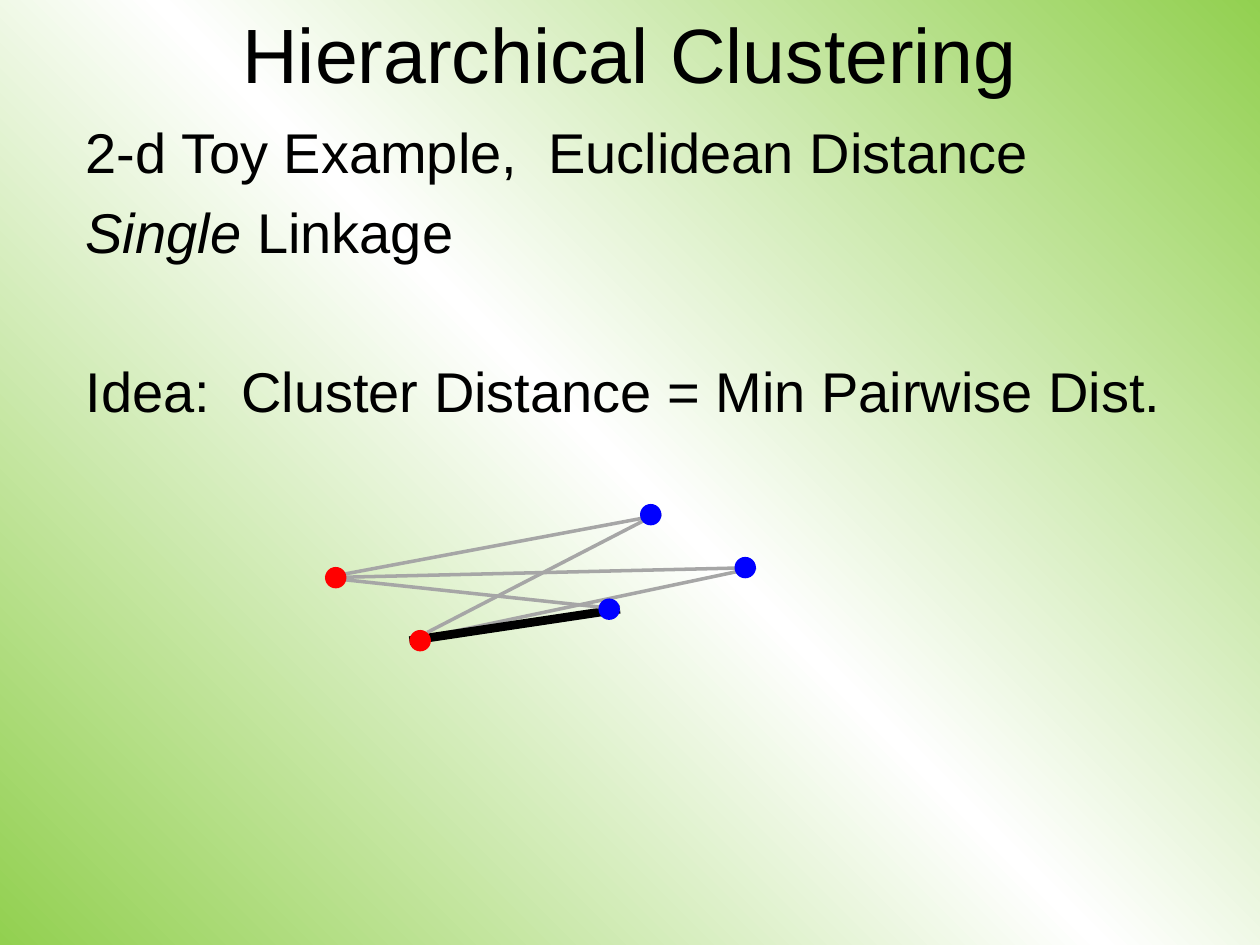
from copy import deepcopy
from dataclasses import dataclass

from lxml import etree
from pptx import Presentation
from pptx.dml.color import RGBColor
from pptx.enum import shapes, text
from pptx.oxml.ns import qn
from pptx.util import Inches, Pt


@dataclass(frozen=True)
class Theme:
    font: str = "Arial"
    title_size: float = 44
    body_size: float = 32
    line_gap: float = 7.7
    section_gap: float = 52.2
    ink: str = "000000"
    link: str = "A6A6A6"
    red: str = "FF0000"
    blue: str = "0000FF"
    edge: str = "92D050"
    center: str = "FFFFFF"


@dataclass(frozen=True)
class Dot:
    x: float
    y: float
    color: str

    @property
    def west(self) -> tuple[float, float]:
        return self.x, self.y + DIAMETER / 2

    @property
    def east(self) -> tuple[float, float]:
        return self.x + DIAMETER, self.y + DIAMETER / 2


@dataclass(frozen=True)
class Link:
    start: tuple[float, float]
    end: tuple[float, float]
    color: str
    width: float = 2


@dataclass(frozen=True)
class Line:
    runs: tuple[tuple[str, bool], ...]
    before: float


THEME = Theme()
DIAMETER = 0.17

RED_UPPER = Dot(2.58, 4.5, THEME.red)
RED_LOWER = Dot(3.25, 5, THEME.red)
BLUE_TOP = Dot(5.08, 4, THEME.blue)
BLUE_NEAR = Dot(4.75, 4.75, THEME.blue)
BLUE_FAR = Dot(5.83, 4.42, THEME.blue)
DOTS = (RED_UPPER, RED_LOWER, BLUE_TOP, BLUE_NEAR, BLUE_FAR)

LINKS = (
    Link(RED_LOWER.west, BLUE_FAR.east, THEME.link),
    Link(RED_LOWER.west, BLUE_NEAR.east, THEME.ink, 5),
    *(Link(RED_UPPER.west, dot.east, THEME.link) for dot in (BLUE_NEAR, BLUE_FAR, BLUE_TOP)),
    Link((3.39, 5.02), (5.21, 4.08), THEME.link),
)

LINES = (
    Line((("2-d Toy Example,  Euclidean Distance", False),), 0),
    Line((("Single", True), (" Linkage", False)), THEME.line_gap),
    Line((("Idea:  Cluster Distance = Min Pairwise Dist.", False),), THEME.section_gap),
)


def paint_background(s) -> None:
    fill = s.background.fill
    fill.gradient()
    fill.gradient_angle = 225
    stops = s._element.find(".//" + qn("a:gsLst"))
    stops.insert(1, deepcopy(stops[0]))
    colors = (THEME.edge, THEME.center, THEME.edge)
    for stop, position, color in zip(fill.gradient_stops, (0, 0.5, 1), colors):
        stop.position = position
        stop.color.rgb = RGBColor.from_string(color)


def place(sp, left: float, top: float, width: float, height: float) -> None:
    sp.left, sp.top, sp.width, sp.height = map(Inches, (left, top, width, height))


def add_run(p, content: str, size: float, italic: bool = False) -> None:
    r = p.add_run()
    r.text = content
    r.font.name = THEME.font
    r.font.size = Pt(size)
    r.font.italic = italic
    r.font.color.rgb = RGBColor.from_string(THEME.ink)


def write_title(sp) -> None:
    place(sp, 0.75, 0.08, 8.5, 0.67)
    tf = sp.text_frame
    tf.auto_size = text.MSO_AUTO_SIZE.NONE
    tf.vertical_anchor = text.MSO_ANCHOR.MIDDLE
    p = tf.paragraphs[0]
    p.alignment = text.PP_ALIGN.CENTER
    add_run(p, "Hierarchical Clustering", THEME.title_size)


def write_body(sp) -> None:
    place(sp, 0.58, 0.88, 9.25, 6.2)
    tf = sp.text_frame
    tf.auto_size = text.MSO_AUTO_SIZE.NONE
    for i, line in enumerate(LINES):
        p = tf.add_paragraph() if i else tf.paragraphs[0]
        pPr = p._p.get_or_add_pPr()
        pPr.set("marL", "0")
        pPr.set("indent", "0")
        etree.SubElement(pPr, qn("a:buNone"))
        p.space_before = Pt(line.before)
        for content, italic in line.runs:
            add_run(p, content, THEME.body_size, italic)


def draw_link(s, link: Link) -> None:
    ends = map(Inches, (*link.start, *link.end))
    sp = s.shapes.add_connector(shapes.MSO_CONNECTOR.STRAIGHT, *ends)
    sp.line.color.rgb = RGBColor.from_string(link.color)
    sp.line.width = Pt(link.width)
    etree.SubElement(sp._element.spPr, qn("a:effectLst"))


def draw_dot(s, dot: Dot) -> None:
    box = map(Inches, (dot.x, dot.y, DIAMETER, DIAMETER))
    sp = s.shapes.add_shape(shapes.MSO_SHAPE.OVAL, *box)
    sp.shadow.inherit = False
    sp.fill.solid()
    sp.fill.fore_color.rgb = RGBColor.from_string(dot.color)
    sp.line.fill.background()


def main() -> None:
    prs = Presentation()
    prs.slide_width, prs.slide_height = Inches(10), Inches(7.5)
    s = prs.slides.add_slide(prs.slide_layouts[1])
    paint_background(s)
    write_title(s.shapes.title)
    write_body(s.placeholders[1])
    for link in LINKS:
        draw_link(s, link)
    for dot in DOTS:
        draw_dot(s, dot)
    prs.save("out.pptx")


if __name__ == "__main__":
    main()
